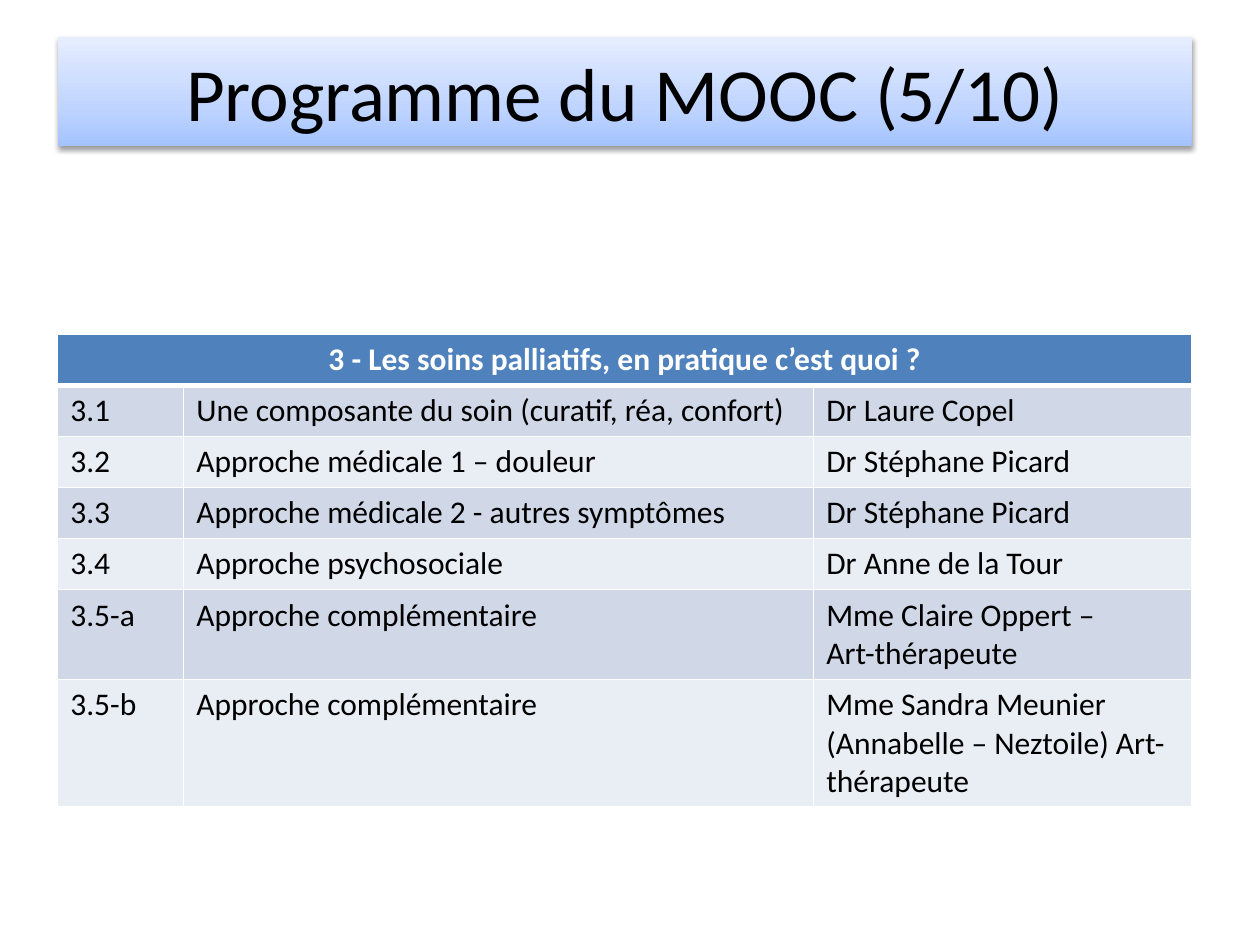
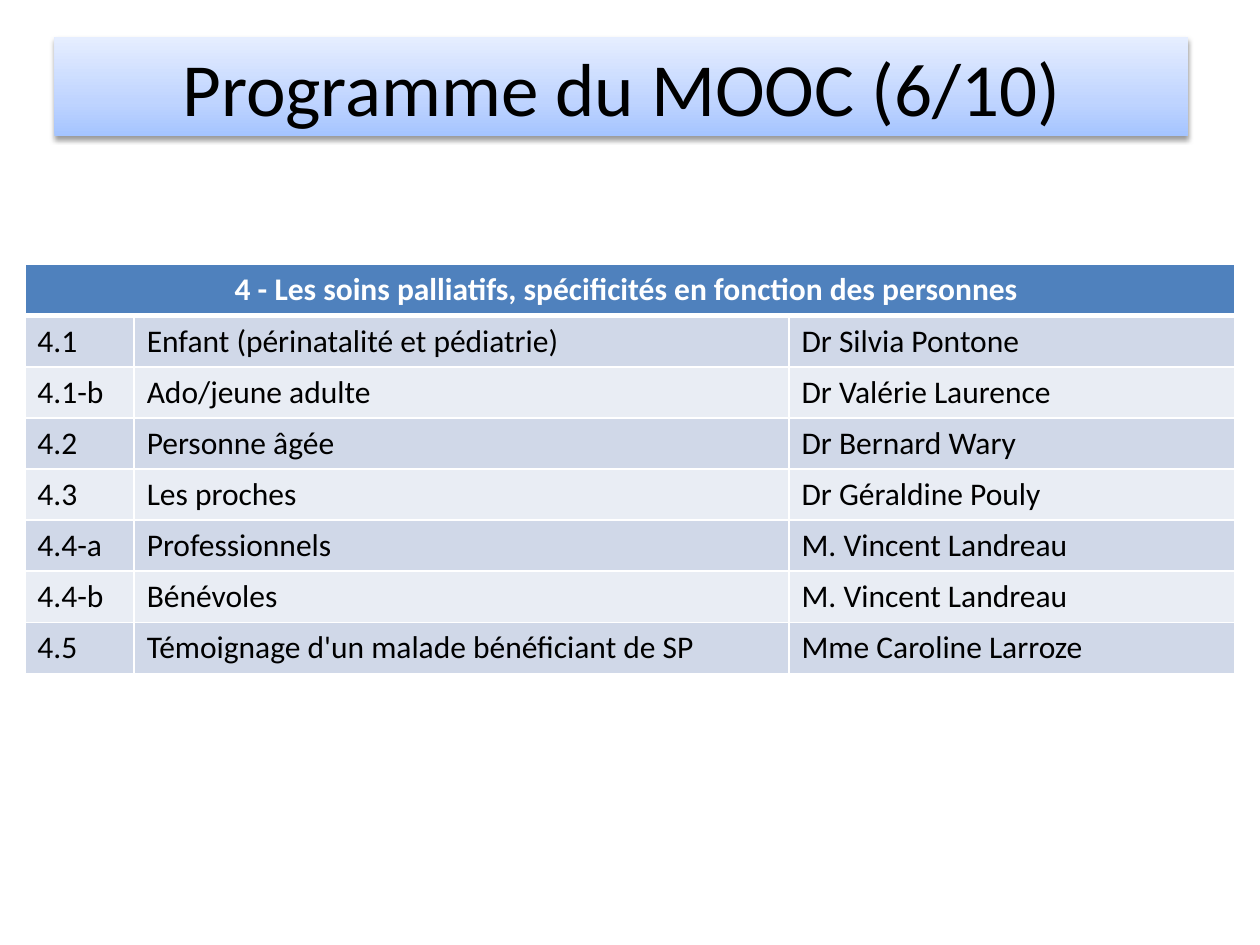
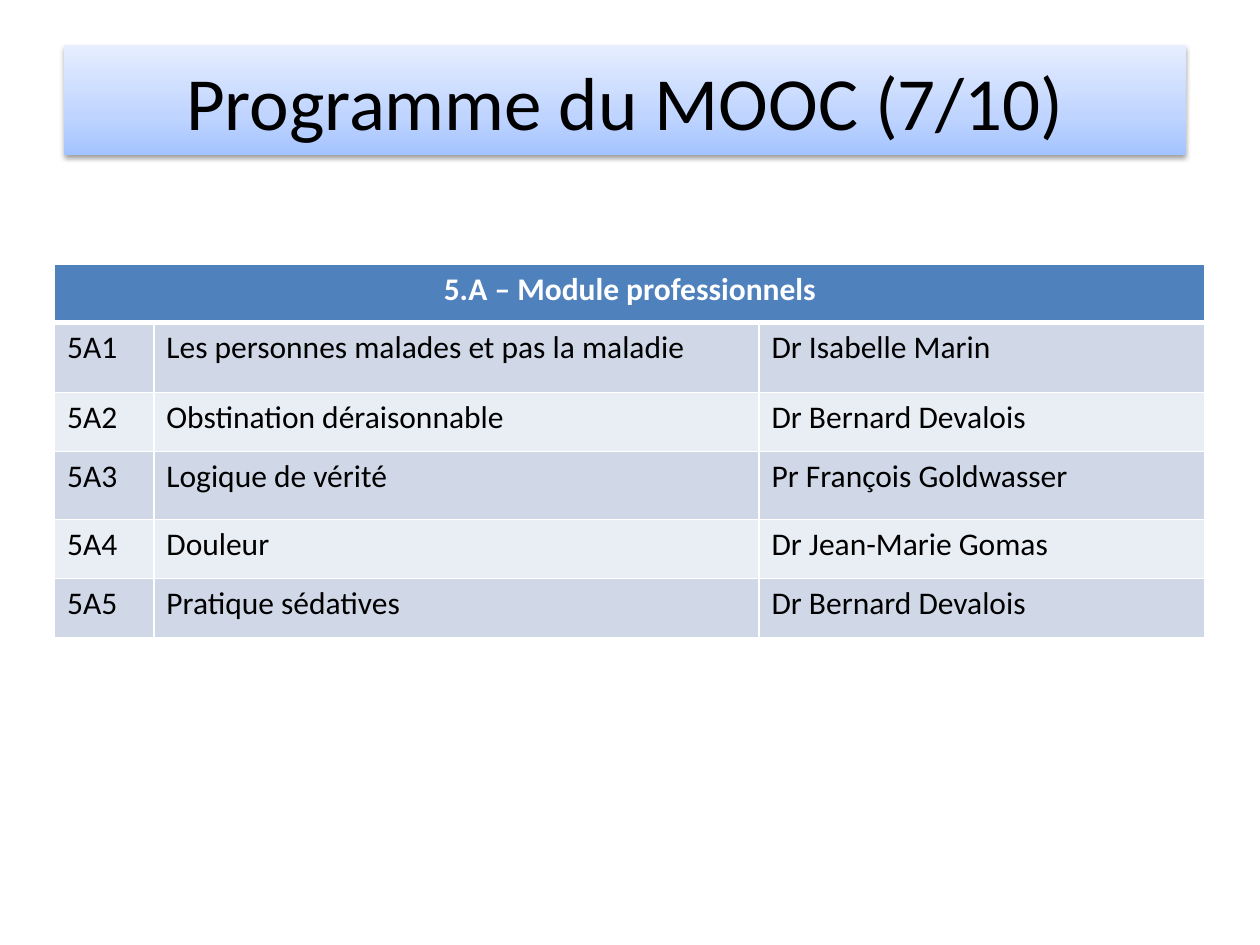
from lxml import etree
from pptx import Presentation
from pptx.dml.color import RGBColor
from pptx.enum import text
from pptx.oxml import parse_xml
from pptx.oxml.ns import nsdecls, qn
from pptx.util import Pt

WHITE = RGBColor(0xFF, 0xFF, 0xFF)
BLACK = RGBColor(0, 0, 0)
HEADER_BLUE = RGBColor(0x4F, 0x81, 0xBD)
ROW_FILLS = RGBColor(0xD0, 0xD8, 0xE8), RGBColor(0xE9, 0xED, 0xF4)
BAND_STOPS = (
    (0, RGBColor(0xA4, 0xC4, 0xFF)),
    (35, RGBColor(0xBF, 0xD4, 0xFF)),
    (100, RGBColor(0xE6, 0xEE, 0xFF)),
)

TITLE_FONT = {"name": "Calibri", "size": Pt(42.9), "bold": False}
HEADER_FONT = {"name": "Calibri", "size": Pt(18), "bold": True}
BODY_FONT = {**HEADER_FONT, "bold": False}
THIN, THICK = Pt(1), Pt(3)
LINE_HEIGHT = 29.2

# Boxes are left, top, width, height; every length is in points.
MODULES = [
    {
        "title": "Programme du MOOC (5/10)",
        "title_box": (33, 21, 648, 62.5),
        "table_corner": (33, 191),
        "columns": (72, 360, 216),
        "row_heights": [LINE_HEIGHT] * 7,
        "heading": "3 - Les soins palliatifs, en pratique c’est quoi ?",
        "lessons": [
            ("3.1", "Une composante du soin (curatif, réa, confort)", "Dr Laure Copel"),
            ("3.2", "Approche médicale 1 – douleur", "Dr Stéphane Picard"),
            ("3.3", "Approche médicale 2 - autres symptômes", "Dr Stéphane Picard"),
            ("3.4", "Approche psychosociale", "Dr Anne de la Tour"),
            ("3.5-a", "Approche complémentaire", "Mme Claire Oppert –\nArt-thérapeute"),
            ("3.5-b", "Approche complémentaire",
             "Mme Sandra Meunier (Annabelle – Neztoile) Art-thérapeute"),
        ],
    },
    {
        "title": "Programme du MOOC (6/10)",
        "title_box": (31, 21, 648, 57),
        "table_corner": (14.2, 151.2),
        "columns": (62.5, 374.2, 255),
        "row_heights": [LINE_HEIGHT] * 8,
        "heading": "4 - Les soins palliatifs, spécificités en fonction des personnes ",
        "lessons": [
            ("4.1", "Enfant (périnatalité et pédiatrie)", "Dr Silvia Pontone"),
            ("4.1-b", "Ado/jeune adulte", "Dr Valérie Laurence"),
            ("4.2", "Personne âgée", "Dr Bernard Wary"),
            ("4.3", "Les proches", "Dr Géraldine Pouly"),
            ("4.4-a", "Professionnels", "M. Vincent Landreau"),
            ("4.4-b", "Bénévoles", "M. Vincent Landreau"),
            ("4.5", "Témoignage d'un malade bénéficiant de SP", "Mme Caroline Larroze"),
        ],
    },
    {
        "title": "Programme du MOOC (7/10)",
        "title_box": (36.5, 26, 641, 62.5),
        "table_corner": (31.2, 151.2),
        "columns": (56.7, 345.8, 255),
        "row_heights": [33, 40, 33.7, 39, 33.7, 33.7],
        "heading": "5.A – Module professionnels",
        "lessons": [
            ("5A1", "Les personnes malades et pas la maladie", "Dr Isabelle Marin"),
            ("5A2", "Obstination déraisonnable", "Dr Bernard Devalois"),
            ("5A3", "Logique de vérité", "Pr François Goldwasser"),
            ("5A4", "Douleur", "Dr Jean-Marie Gomas"),
            ("5A5", "Pratique sédatives", "Dr Bernard Devalois"),
        ],
    },
]


def set_attributes(target, values):
    for name, value in values.items():
        setattr(target, name, value)


def format_text(frame, font, color, alignment):
    for paragraph in frame.paragraphs:
        paragraph.alignment = alignment
        for run in paragraph.runs:
            set_attributes(run.font, font)
            run.font.color.rgb = color


def add_band_style(shape):
    """Give a shape the vertical gradient and the soft shadow of the title band."""
    stops = "".join(
        f'<a:gs pos="{percent * 1000}"><a:srgbClr val="{color}"/></a:gs>'
        for percent, color in BAND_STOPS
    )
    gradient = (
        f'<a:gradFill {nsdecls("a")} rotWithShape="1"><a:gsLst>{stops}</a:gsLst>'
        '<a:lin ang="16200000" scaled="0"/></a:gradFill>'
    )
    shadow = (
        f'<a:effectLst {nsdecls("a")}>'
        f'<a:outerShdw blurRad="{Pt(3.1)}" dist="{Pt(1.6)}" dir="5400000" rotWithShape="0">'
        f'<a:srgbClr val="{BLACK}"><a:alpha val="38000"/></a:srgbClr>'
        '</a:outerShdw></a:effectLst>'
    )
    for xml in (gradient, shadow):
        shape._element.spPr.append(parse_xml(xml))


def add_title(slide, title, box):
    shape = slide.shapes.title
    set_attributes(shape, dict(zip(("left", "top", "width", "height"), map(Pt, box))))
    add_band_style(shape)
    frame = shape.text_frame
    frame.text = title
    set_attributes(frame, {
        "auto_size": text.MSO_AUTO_SIZE.NONE,
        "vertical_anchor": text.MSO_ANCHOR.MIDDLE,
    })
    format_text(frame, TITLE_FONT, BLACK, text.PP_ALIGN.CENTER)


def set_borders(cell, top, bottom):
    """Draw white borders; call before the fill, which must follow them in the XML."""
    properties = cell._tc.get_or_add_tcPr()
    for side, width in (("L", THIN), ("R", THIN), ("T", top), ("B", bottom)):
        line = etree.SubElement(properties, qn(f"a:ln{side}"), w=str(width))
        fill = etree.SubElement(line, qn("a:solidFill"))
        etree.SubElement(fill, qn("a:srgbClr"), val=str(WHITE))


def style_cell(cell, row_index):
    is_header = row_index == 0
    set_borders(cell, THICK if row_index == 1 else THIN, THICK if is_header else THIN)
    cell.fill.solid()
    cell.fill.fore_color.rgb = HEADER_BLUE if is_header else ROW_FILLS[(row_index - 1) % 2]
    if is_header:
        format_text(cell.text_frame, HEADER_FONT, WHITE, text.PP_ALIGN.CENTER)
    else:
        format_text(cell.text_frame, BODY_FONT, BLACK, text.PP_ALIGN.LEFT)


def add_lesson_table(slide, corner, columns, row_heights, heading, lessons):
    left, top = corner
    table = slide.shapes.add_table(
        len(row_heights), len(columns),
        Pt(left), Pt(top), Pt(sum(columns)), Pt(sum(row_heights)),
    ).table
    set_attributes(table, {"first_row": False, "horz_banding": False})
    for column, width in zip(table.columns, columns):
        column.width = Pt(width)
    table.cell(0, 0).merge(table.cell(0, len(columns) - 1))
    table.cell(0, 0).text = heading
    for row_index, (row, height) in enumerate(zip(table.rows, row_heights)):
        row.height = Pt(height)
        for column_index, cell in enumerate(row.cells):
            if row_index:
                cell.text = lessons[row_index - 1][column_index]
            style_cell(cell, row_index)


def main():
    presentation = Presentation()
    set_attributes(presentation, {"slide_width": Pt(720), "slide_height": Pt(540)})
    title_only = presentation.slide_layouts.get_by_name("Title Only")
    for module in MODULES:
        slide = presentation.slides.add_slide(title_only)
        add_lesson_table(slide, module["table_corner"], module["columns"],
                         module["row_heights"], module["heading"], module["lessons"])
        add_title(slide, module["title"], module["title_box"])
    presentation.save("out.pptx")


if __name__ == "__main__":
    main()
